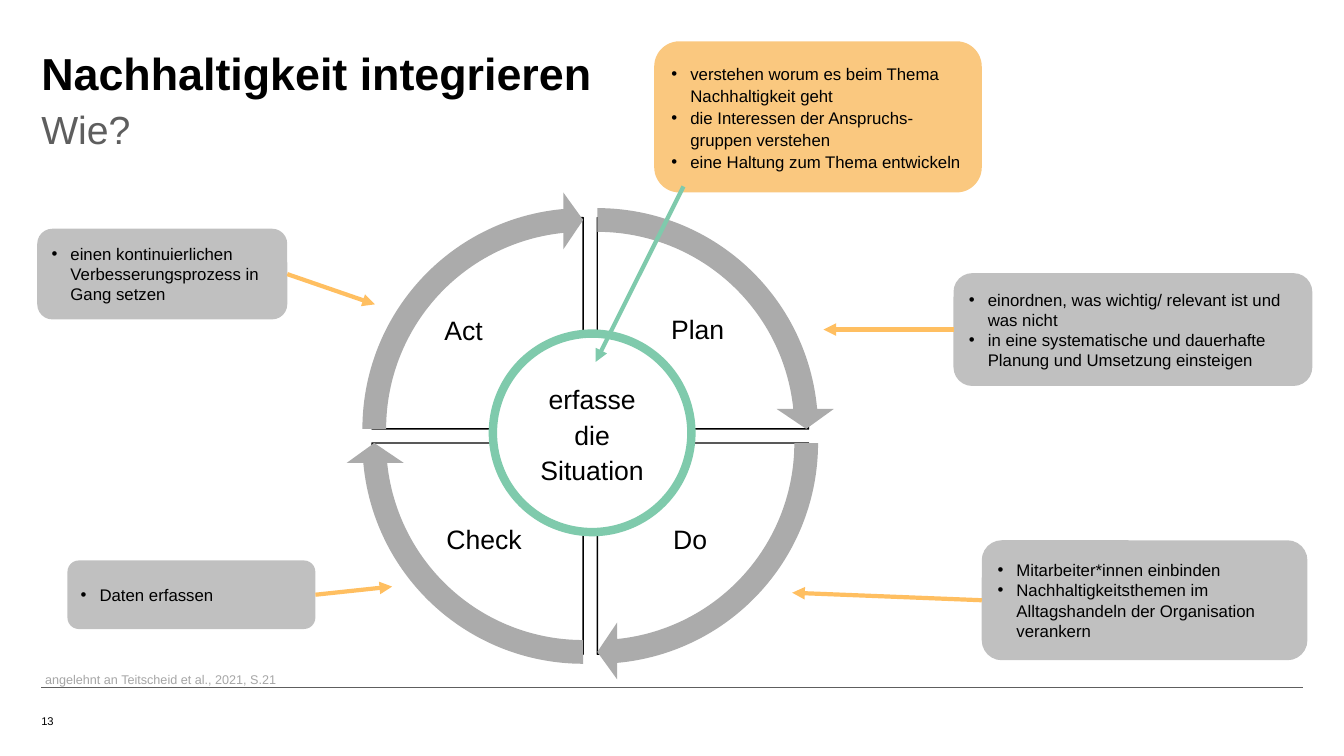
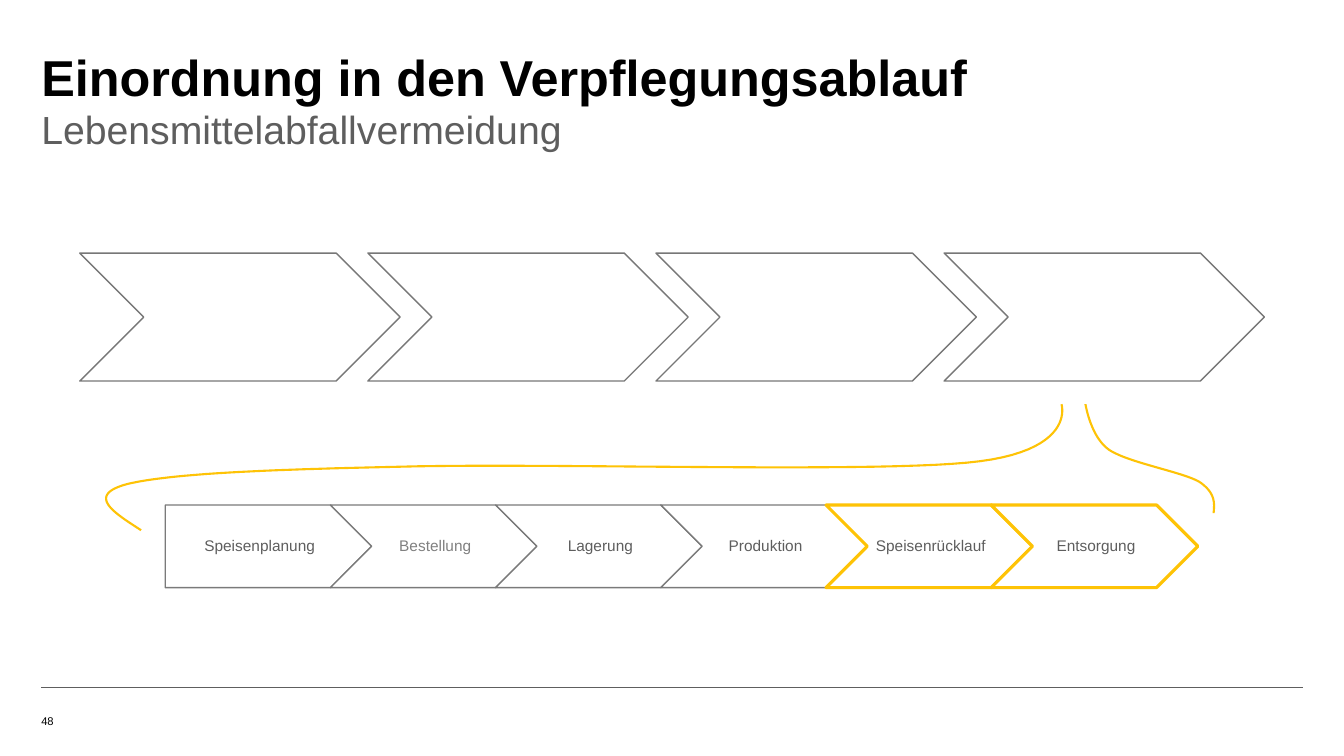
"""Build two slides: a sustainability cycle and a catering process chain."""
from lxml import etree
from pptx import Presentation
from pptx.dml.color import RGBColor
from pptx.enum.shapes import MSO_CONNECTOR, MSO_SHAPE
from pptx.enum.text import MSO_ANCHOR, MSO_AUTO_SIZE, PP_ALIGN
from pptx.oxml.ns import qn
from pptx.util import Pt

STRAIGHT = MSO_CONNECTOR.STRAIGHT
PIE, CIRCULAR_ARROW = MSO_SHAPE.PIE, MSO_SHAPE.CIRCULAR_ARROW
ROUNDED, OVAL = MSO_SHAPE.ROUNDED_RECTANGLE, MSO_SHAPE.OVAL
CHEVRON, PENTAGON = MSO_SHAPE.CHEVRON, MSO_SHAPE.PENTAGON
TOP, MIDDLE, BOTTOM = MSO_ANCHOR.TOP, MSO_ANCHOR.MIDDLE, MSO_ANCHOR.BOTTOM
LEFT, CENTER = PP_ALIGN.LEFT, PP_ALIGN.CENTER
NO_AUTOFIT = MSO_AUTO_SIZE.NONE

FONT = "Arial"
BLACK, WHITE, DARK = "000000", "FFFFFF", "5E5E5E"
ARROW_GRAY, BOX_GRAY, CREDIT_GRAY = "ABABAB", "838383", "A6A6A6"
OUTLINE, STEP_OUTLINE, PALE_TEXT = "777777", "7A7A7A", "808080"
ORANGE, LIGHT_ORANGE, GREEN, GOLD = "F69200", "FFBF61", "7FCAAC", "FEC306"
DEFAULT_INSETS = (7.2, 3.6, 7.2, 3.6)
NO_INSETS = (0, 0, 0, 0)

CALLOUTS = [
    {"box": (681.1, 195.1, 256.3, 80.6), "target": (588.2, 235.4),
     "items": ["einordnen, was wichtig/ relevant ist und was nicht",
               "in eine systematische und dauerhafte Planung und Umsetzung einsteigen"]},
    {"box": (701.3, 385.9, 232.6, 85.7), "target": (565.9, 423.4),
     "items": ["Mitarbeiter*innen einbinden",
               "Nachhaltigkeitsthemen im Alltagshandeln der Organisation verankern"]},
    {"box": (48.2, 400.3, 177.1, 49), "target": (280.1, 419),
     "items": ["Daten erfassen"]},
    {"box": (26.6, 163.4, 178.6, 64.8), "target": (267.8, 217.4),
     "items": ["einen kontinuierlichen Verbesserungsprozess in Gang setzen"]},
]
UNDERSTAND_ITEMS = ["verstehen worum es beim Thema Nachhaltigkeit geht",
                    "die Interessen der Anspruchs-gruppen verstehen",
                    "eine Haltung zum Thema entwickeln"]
PHASES = [
    {"label": "Plan", "box": (472.3, 217.4, 53.3, 31), "column": 1, "row": 0, "start": 162},
    {"label": "Do", "box": (473.8, 367.9, 38.9, 31), "column": 1, "row": 1, "start": 0},
    {"label": "Check", "box": (311.8, 367.9, 69.1, 31), "column": 0, "row": 1, "start": 54},
    {"label": "Act", "box": (310.3, 218.2, 42.5, 31), "column": 0, "row": 0, "start": 108},
]
FULL_TURN, QUARTER_TURN, ARROW_HEAD = 216, 54, 3.275
PIE_LEFT, PIE_TOP, PIE_SIZE = 265.7, 155.5, 301.7
PHASE_GAP, ARROW_MARGIN = 10.1, 18.7

STEPS = [("Speisenplanung", DARK, False), ("Bestellung", PALE_TEXT, False),
         ("Lagerung", DARK, False), ("Produktion", DARK, False),
         ("Speisenrücklauf", DARK, True), ("Entsorgung", DARK, True)]
BRACES = [
    ((100.8, 378.7), [((80.6, 365.8), (61.2, 353.5), (91.4, 345.6)),
                      ((122.4, 338.4), (185.8, 335.5), (285.1, 333.4)),
                      ((385.2, 330.5), (612, 337.7), (690.5, 330.5)),
                      ((769.7, 323.3), (758.2, 288.7), (758.2, 288.7))]),
    ((866.9, 366.5), [((867.6, 359.3), (868.3, 352.1), (856.8, 344.2)),
                      ((844.6, 337), (805.7, 330.5), (792, 321.1)),
                      ((779, 311.8), (775.4, 288.7), (775.4, 288.7))]),
]
CURVE_PARTS = 24


def color(value):
    return RGBColor.from_string(value)


def points(values):
    return [Pt(value) for value in values]


def write(shape, texts, size, ink=BLACK, bold=False, align=LEFT, anchor=TOP,
          insets=DEFAULT_INSETS, spacing=None, wrap=True, bullets=False):
    frame = shape.text_frame
    frame.auto_size = NO_AUTOFIT
    frame.word_wrap = wrap
    frame.vertical_anchor = anchor
    (frame.margin_left, frame.margin_top,
     frame.margin_right, frame.margin_bottom) = points(insets)
    for index, text in enumerate(texts):
        paragraph = frame.add_paragraph() if index else frame.paragraphs[0]
        paragraph.alignment = align
        if spacing:
            paragraph.line_spacing = spacing
        if bullets:
            properties = paragraph._p.get_or_add_pPr()
            properties.set("marL", str(Pt(13.5)))
            properties.set("indent", str(-Pt(13.5)))
            etree.SubElement(properties, qn("a:buFont")).set("typeface", FONT)
            etree.SubElement(properties, qn("a:buChar")).set("char", "•")
        run = paragraph.add_run()
        run.text = text
        run.font.name, run.font.size, run.font.bold = FONT, Pt(size), bold
        run.font.color.rgb = color(ink)


def add_text(slide, box, text, size, **style):
    write(slide.shapes.add_textbox(*points(box)), [text], size, **style)


def paint(shape, fill=None, line=None, width=1.0):
    shape.shadow.inherit = False
    if fill:
        shape.fill.solid()
        shape.fill.fore_color.rgb = color(fill)
    else:
        shape.fill.background()
    if line:
        shape.line.color.rgb = color(line)
        shape.line.width = Pt(width)
    else:
        shape.line.fill.background()


def add_shape(slide, kind, box, fill=None, line=None, width=1.0, adjustments=()):
    shape = slide.shapes.add_shape(kind, *points(box))
    paint(shape, fill, line, width)
    for index, value in enumerate(adjustments):
        shape.adjustments[index] = value
    return shape


def add_line(slide, start, end, ink, width, arrow=True):
    connector = slide.shapes.add_connector(STRAIGHT, *points((*start, *end)))
    connector.line.color.rgb = color(ink)
    connector.line.width = Pt(width)
    if arrow:
        tail = etree.SubElement(connector.line._get_or_add_ln(), qn("a:tailEnd"))
        tail.set("type", "triangle")
    etree.SubElement(connector._element.spPr, qn("a:effectLst"))


def add_callout(slide, box, items, fill, spacing=None):
    shape = add_shape(slide, ROUNDED, box, fill)
    solid = shape._element.spPr.find(qn("a:solidFill"))
    etree.SubElement(solid[0], qn("a:alpha")).set("val", "50000")
    write(shape, items, 12, anchor=MIDDLE, spacing=spacing, bullets=True)


def add_curve(slide, start, segments):
    outline, origin = [], start
    for first, second, end in segments:
        for part in range(1, CURVE_PARTS + 1):
            t = part / CURVE_PARTS
            weights = ((1 - t) ** 3, 3 * t * (1 - t) ** 2, 3 * t * t * (1 - t), t ** 3)
            controls = (origin, first, second, end)
            outline.append(tuple(
                Pt(sum(weight * control[axis] for weight, control in zip(weights, controls)))
                for axis in (0, 1)))
        origin = end
    builder = slide.shapes.build_freeform(*points(start))
    builder.add_line_segments(outline, close=False)
    paint(builder.convert_to_shape(), line=GOLD, width=1.5)


def new_slide(presentation, title, title_size, subtitle, number):
    slide = presentation.slides.add_slide(presentation.slide_layouts[5])
    heading = slide.shapes.title
    heading.left, heading.top, heading.width, heading.height = points((29.5, 33, 694.8, 44.6))
    write(heading, [title], title_size, bold=True, insets=NO_INSETS)
    add_text(slide, (29.5, 72, 694.8, 39.6), subtitle, 28, ink=DARK,
             insets=NO_INSETS, spacing=1.1)
    add_line(slide, (29.5, 491), (931, 491), DARK, 0.5, arrow=False)
    add_text(slide, (29.5, 496.8, 113, 23), number, 8, anchor=BOTTOM, insets=NO_INSETS)
    return slide


def build_cycle(presentation):
    slide = new_slide(presentation, "Nachhaltigkeit integrieren", 32, "Wie?", "13")
    arrow_size = PIE_SIZE + 2 * ARROW_MARGIN
    corners = [(PIE_LEFT + phase["column"] * PHASE_GAP, PIE_TOP + phase["row"] * PHASE_GAP)
               for phase in PHASES]
    for phase, (left, top) in zip(PHASES, corners):
        end = (phase["start"] + QUARTER_TURN) % FULL_TURN
        add_shape(slide, PIE, (left, top, PIE_SIZE, PIE_SIZE), WHITE, BLACK,
                  adjustments=(phase["start"], end))
    for phase, (left, top) in zip(PHASES, corners):
        tip = phase["start"] + QUARTER_TURN - ARROW_HEAD
        add_shape(slide, CIRCULAR_ARROW,
                  (left - ARROW_MARGIN, top - ARROW_MARGIN, arrow_size, arrow_size), ARROW_GRAY,
                  adjustments=(0.05, ARROW_HEAD, tip, phase["start"], 0.06))
    for callout in CALLOUTS:
        left, top, width, height = callout["box"]
        edge = left if callout["target"][0] < left else left + width
        add_callout(slide, callout["box"], callout["items"], BOX_GRAY)
        add_line(slide, (edge, top + height / 2), callout["target"], LIGHT_ORANGE, 3)
    center = add_shape(slide, OVAL, (352.1, 238.3, 141.8, 141.8), WHITE, GREEN, 6)
    write(center, ["erfasse die Situation"], 19, align=CENTER, anchor=MIDDLE, spacing=1.1)
    for phase in PHASES:
        add_text(slide, phase["box"], phase["label"], 19, spacing=1.1, wrap=False)
    add_callout(slide, (467.3, 29.5, 234, 108), UNDERSTAND_ITEMS, ORANGE, spacing=1.1)
    add_line(slide, (488.2, 133.2), (425.5, 258.5), GREEN, 3)
    add_text(slide, (25.2, 475.2, 182.2, 18), "angelehnt an Teitscheid et al., 2021, S.21", 9,
             ink=CREDIT_GRAY, spacing=1.1, wrap=False)


def build_process(presentation):
    slide = new_slide(presentation, "Einordnung in den Verpflegungsablauf", 36,
                      "Lebensmittelabfallvermeidung", "48")
    for index in range(4):
        add_shape(slide, CHEVRON, (57 + index * 205.8, 180.8, 228.8, 91.4), WHITE, OUTLINE)
    for start, segments in BRACES:
        add_curve(slide, start, segments)
    for index, (label, ink, highlighted) in enumerate(STEPS):
        step = add_shape(slide, CHEVRON if index else PENTAGON,
                         (118 + index * 118, 360.7, 147.6, 59), WHITE,
                         GOLD if highlighted else STEP_OUTLINE, 2.25 if highlighted else 1)
        write(step, [label], 11, ink=ink, align=CENTER, anchor=MIDDLE,
              insets=(3.6, 2.2, 1.4, 2.2), spacing=0.9)


def main():
    presentation = Presentation()
    presentation.slide_width, presentation.slide_height = Pt(960), Pt(540)
    build_cycle(presentation)
    build_process(presentation)
    presentation.save("out.pptx")


if __name__ == "__main__":
    main()
